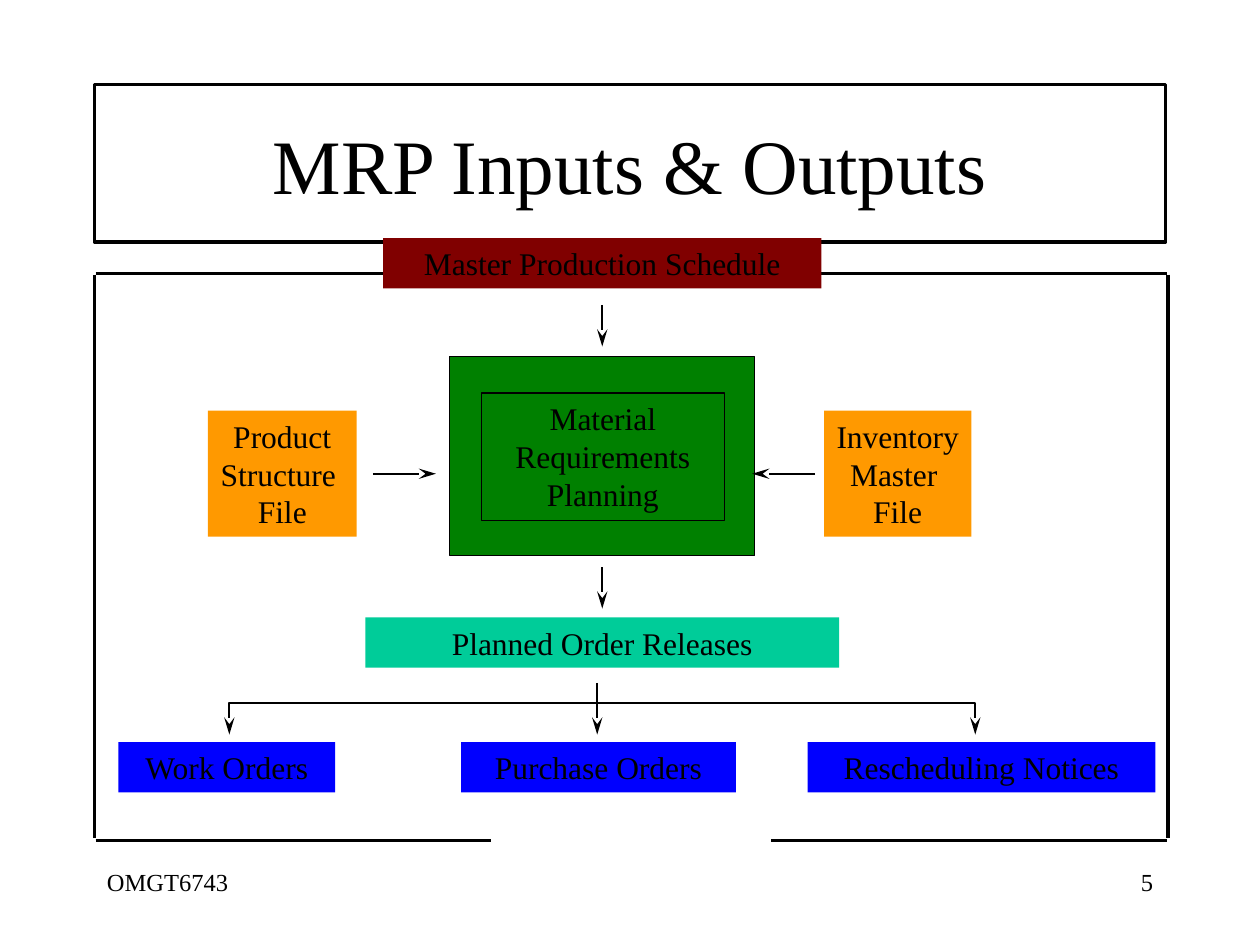
from lxml.etree import SubElement
from pptx import Presentation
from pptx.dml.color import RGBColor
from pptx.enum.shapes import MSO_CONNECTOR, MSO_SHAPE
from pptx.enum.text import MSO_ANCHOR, MSO_AUTO_SIZE, PP_ALIGN
from pptx.oxml.ns import qn
from pptx.util import Inches, Pt

FONT = "Times New Roman"
BLACK = RGBColor(0x00, 0x00, 0x00)
MAROON = RGBColor(0x80, 0x00, 0x00)
GREEN = RGBColor(0x00, 0x80, 0x00)
TEAL = RGBColor(0x00, 0xCC, 0x99)
BLUE = RGBColor(0x00, 0x00, 0xFF)
ORANGE = RGBColor(0xFF, 0x99, 0x00)


def write_lines(text_frame, lines, size, alignment):
    for index, line in enumerate(lines):
        paragraph = text_frame.paragraphs[0] if index == 0 else text_frame.add_paragraph()
        paragraph.alignment = alignment
        run = paragraph.add_run()
        run.text = line
        run.font.name = FONT
        run.font.size = Pt(size)
        run.font.color.rgb = BLACK


def add_label(slide, box, text, size, alignment, anchor=MSO_ANCHOR.TOP):
    label = slide.shapes.add_textbox(*map(Inches, box))
    label.text_frame.word_wrap = True
    label.text_frame.vertical_anchor = anchor
    write_lines(label.text_frame, [text], size, alignment)


def add_box(slide, box, fill=None, lines=(), line_width=None, wrap=True):
    shape = slide.shapes.add_shape(MSO_SHAPE.RECTANGLE, *map(Inches, box))
    shape.shadow.inherit = False
    if fill is None:
        shape.fill.background()
    else:
        shape.fill.solid()
        shape.fill.fore_color.rgb = fill
    if line_width is None:
        shape.line.fill.background()
    else:
        shape.line.color.rgb = BLACK
        shape.line.width = Pt(line_width)
    if lines:
        text_frame = shape.text_frame
        text_frame.word_wrap = wrap
        text_frame.auto_size = MSO_AUTO_SIZE.SHAPE_TO_FIT_TEXT
        text_frame.vertical_anchor = MSO_ANCHOR.TOP
        write_lines(text_frame, lines, 18, PP_ALIGN.CENTER)


def add_arrowheads(shape, *ends):
    line = shape.line._get_or_add_ln()
    for end in ends:
        SubElement(line, qn(f"a:{end}"), type="stealth", w="med", len="lg")


def add_line(slide, start, end, width):
    connector = slide.shapes.add_connector(
        MSO_CONNECTOR.STRAIGHT, *map(Inches, (*start, *end)))
    connector.line.color.rgb = BLACK
    connector.line.width = Pt(width)
    SubElement(connector._element.spPr, qn("a:effectLst"))
    return connector


def add_arrow(slide, start, end):
    add_arrowheads(add_line(slide, start, end, 1), "tailEnd")


def add_branch(slide, left, right, top, bottom):
    builder = slide.shapes.build_freeform(Inches(left), Inches(bottom))
    corners = [(left, top), (right, top), (right, bottom)]
    builder.add_line_segments([(Inches(x), Inches(y)) for x, y in corners], close=False)
    branch = builder.convert_to_shape()
    branch.shadow.inherit = False
    branch.fill.background()
    branch.line.color.rgb = BLACK
    branch.line.width = Pt(1)
    add_arrowheads(branch, "headEnd", "tailEnd")


def add_frame(slide):
    title_box = (0.75, 0.67, 8.5, 1.25)
    add_box(slide, title_box, line_width=2)
    for start, end in [
        ((0.76, 2.17), (9.26, 2.17)),
        ((0.75, 2.18), (0.75, 6.65)),
        ((9.27, 2.18), (9.27, 6.65)),
        ((0.76, 6.67), (3.9, 6.67)),
        ((6.12, 6.67), (9.26, 6.67)),
    ]:
        add_line(slide, start, end, 2)
    add_label(slide, title_box, "MRP Inputs & Outputs", 44, PP_ALIGN.CENTER, MSO_ANCHOR.MIDDLE)
    add_label(slide, (0.75, 6.83, 2.08, 0.5), "OMGT6743", 14, PP_ALIGN.LEFT)
    add_label(slide, (7.17, 6.83, 2.08, 0.5), "5", 14, PP_ALIGN.RIGHT)


def add_diagram(slide):
    add_box(slide, (3.04, 1.89, 3.48, 0.4), MAROON, ["Master Production Schedule"])
    add_box(slide, (3.57, 2.83, 2.42, 1.58), GREEN, line_width=0.75)
    add_box(slide, (3.82, 3.12, 1.93, 1.01), GREEN,
            ["Material", "Requirements", "Planning"], line_width=0.75)
    add_branch(slide, 1.82, 7.74, 5.58, 5.83)
    for start, end in [
        ((4.74, 5.42), (4.74, 5.83)),
        ((4.78, 2.42), (4.78, 2.75)),
        ((4.78, 4.5), (4.78, 4.83)),
        ((2.96, 3.76), (3.46, 3.76)),
        ((6.47, 3.76), (5.97, 3.76)),
    ]:
        add_arrow(slide, start, end)
    add_box(slide, (2.9, 4.9, 3.76, 0.4), TEAL, ["Planned Order Releases"])
    for left, width, output in [
        (0.94, 1.72, "Work Orders"),
        (3.66, 2.18, "Purchase Orders"),
        (6.41, 2.76, "Rescheduling Notices"),
    ]:
        add_box(slide, (left, 5.89, width, 0.4), BLUE, [output])
    for left, width, lines in [
        (1.65, 1.18, ["Product", "Structure ", "File"]),
        (6.54, 1.17, ["Inventory", "Master ", "File"]),
    ]:
        add_box(slide, (left, 3.26, width, 1), ORANGE, lines, wrap=False)


def main():
    presentation = Presentation()
    presentation.slide_width = Inches(10)
    presentation.slide_height = Inches(7.5)
    slide = presentation.slides.add_slide(presentation.slide_layouts[6])
    add_frame(slide)
    add_diagram(slide)
    presentation.save("out.pptx")


if __name__ == "__main__":
    main()
